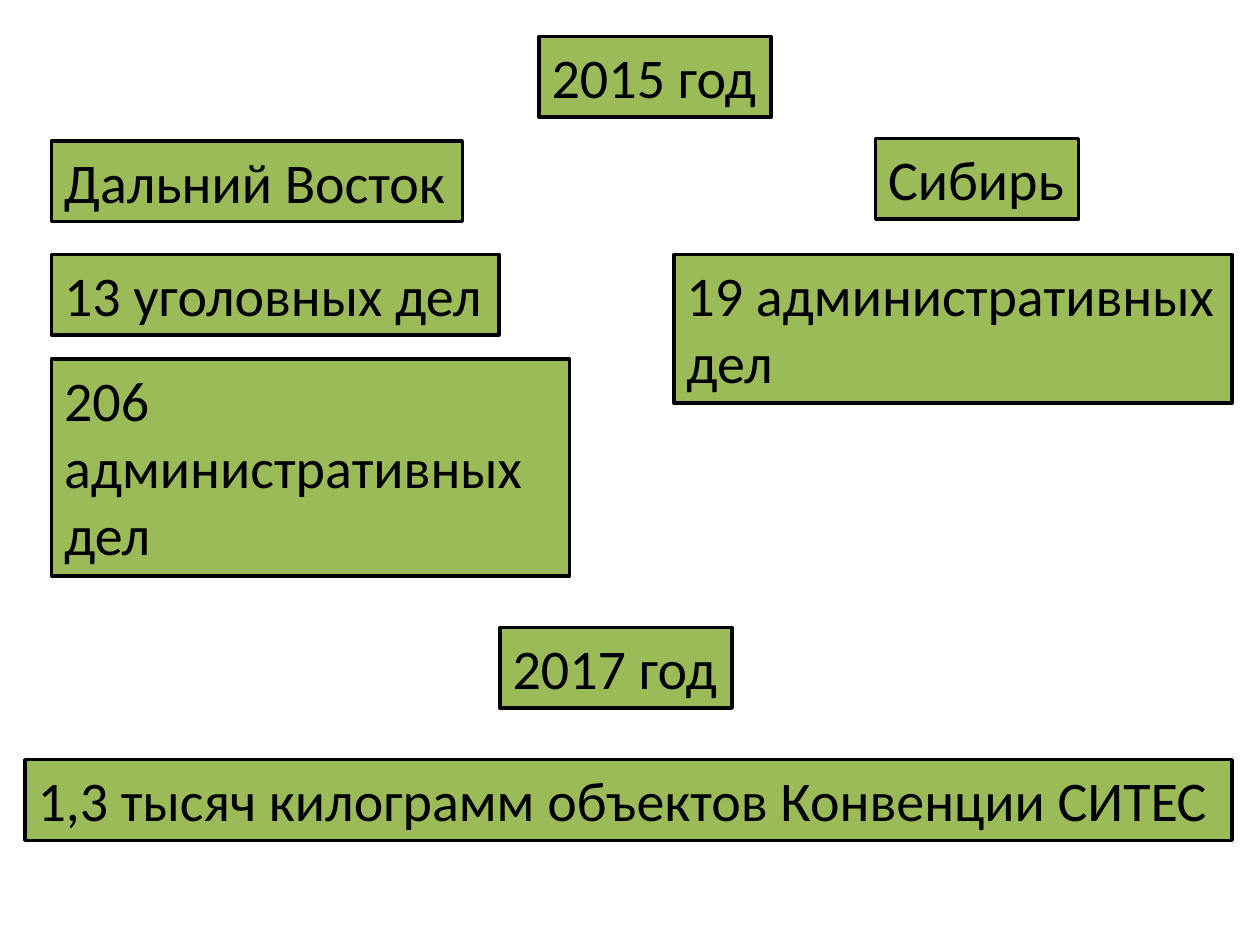
from pptx import Presentation
from pptx.dml.color import RGBColor
from pptx.enum.text import MSO_ANCHOR, MSO_AUTO_SIZE
from pptx.util import Inches, Pt

# Content: text, left, top, width, wraps
LEFT = 0.41
ROW = 2.02
BOXES = [
    ("2015 год", 4.28, 0.29, 1.84, False),
    ("Дальний Восток", LEFT, 1.12, 3.26, False),
    ("Сибирь", 6.95, 1.1, 1.61, False),
    ("13 уголовных дел", LEFT, ROW, 3.55, False),
    ("206 административных дел", LEFT, 2.85, 4.11, True),
    ("19 административных\nдел", 5.35, ROW, 4.43, False),
    ("2017 год", 3.97, 4.98, 1.84, False),
    ("1,3 тысяч килограмм объектов Конвенции СИТЕС", 0.2, 6.03, 9.58, False),
]
PAD, LINE = 0.1, 0.54  # box padding and line height


def paint(part, color):
    part.solid()
    part.fore_color.rgb = RGBColor.from_string(color)


def add_box(slide, text, left, top, width, wraps):
    # A wrapping box holds one word per line
    lines = len(text.split()) if wraps else len(text.split("\n"))
    box = slide.shapes.add_textbox(
        Inches(left), Inches(top), Inches(width), Inches(PAD + LINE * lines))
    paint(box.fill, "9BBB59")
    paint(box.line.fill, "000000")
    box.line.width = Pt(2)

    # Text
    frame = box.text_frame
    frame.text = text
    frame.word_wrap = wraps
    frame.auto_size = MSO_AUTO_SIZE.SHAPE_TO_FIT_TEXT
    frame.vertical_anchor = MSO_ANCHOR.TOP
    for para in frame.paragraphs:
        for run in para.runs:
            run.font.name = "Calibri"
            run.font.size = Pt(32)
            paint(run.font.fill, "000000")


def main():
    deck = Presentation()
    deck.slide_width, deck.slide_height = Inches(10), Inches(7.5)
    slide = deck.slides.add_slide(deck.slide_layouts[6])
    for box in BOXES:
        add_box(slide, *box)
    deck.save("out.pptx")


if __name__ == "__main__":
    main()
